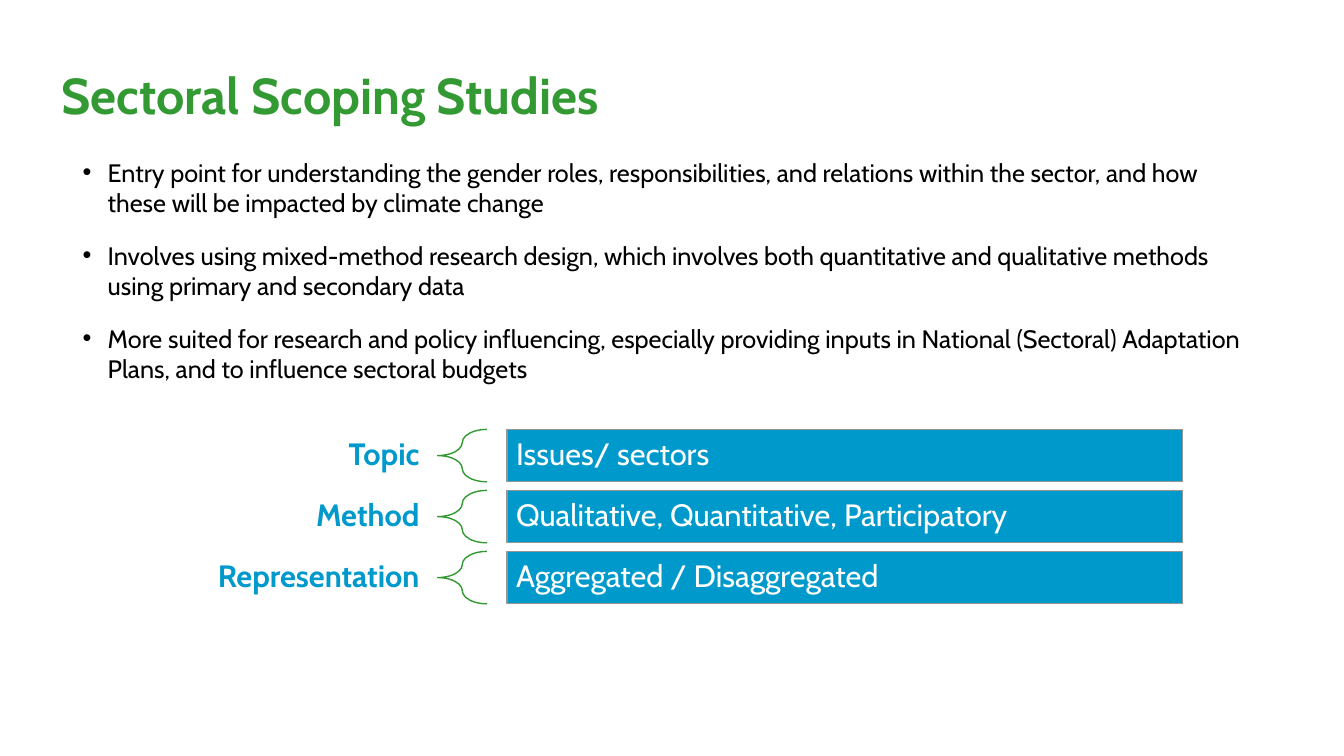
from pptx import Presentation
from pptx.dml.color import RGBColor
from pptx.enum.shapes import MSO_SHAPE
from pptx.enum.text import MSO_ANCHOR, PP_ALIGN
from pptx.oxml.ns import qn
from pptx.util import Inches, Pt
from lxml import etree

FONT = "Cabin"
GREEN, BLUE, GREY, BLACK, WHITE = "339933", "0099CC", "959595", "000000", "FFFFFF"
BULLETS = [
    "Entry point for understanding the gender roles, responsibilities, and relations "
    "within the sector, and how these will be impacted by climate change",
    "Involves using mixed-method research design, which involves both quantitative "
    "and qualitative methods using primary and secondary data",
    "More suited for research and policy influencing, especially providing inputs in "
    "National (Sectoral) Adaptation Plans, and to influence sectoral budgets",
]
ROWS = [
    ("Topic", "Issues/ sectors"),
    ("Method", "Qualitative, Quantitative, Participatory"),
    ("Representation", "Aggregated / Disaggregated"),
]
ROW_TOP, ROW_STEP, ROW_HEIGHT = 4.26, 0.605, 0.52


def rgb(value):
    return RGBColor.from_string(value)


def set_frame(tf, margin_x, margin_y, anchor):
    tf.word_wrap = True
    tf.margin_left = tf.margin_right = Inches(margin_x)
    tf.margin_top = tf.margin_bottom = Inches(margin_y)
    tf.vertical_anchor = anchor


def add_run(p, text, size, color, bold=False):
    r = p.add_run()
    r.text = text
    r.font.name = FONT
    r.font.size = Pt(size)
    r.font.bold = bold
    r.font.color.rgb = rgb(color)


def add_line_of_text(sp, text, size, color, margins, bold=False, align=PP_ALIGN.LEFT):
    """Fill a shape with one vertically centred paragraph."""
    set_frame(sp.text_frame, *margins, MSO_ANCHOR.MIDDLE)
    p = sp.text_frame.paragraphs[0]
    p.alignment = align
    p.line_spacing = 0.9
    add_run(p, text, size, color, bold)


def add_text_box(s, x, y, w, h):
    return s.shapes.add_textbox(Inches(x), Inches(y), Inches(w), Inches(h))


def add_outlined_shape(s, kind, x, y, w, h, line):
    sp = s.shapes.add_shape(kind, Inches(x), Inches(y), Inches(w), Inches(h))
    sp.shadow.inherit = False
    sp.line.color.rgb = rgb(line)
    sp.line.width = Pt(1)
    return sp


def make_bullet(p):
    pPr = p._p.get_or_add_pPr()
    pPr.set("marL", str(Inches(0.25)))
    pPr.set("indent", str(-Inches(0.25)))
    color = etree.SubElement(pPr, qn("a:buClr"))
    etree.SubElement(color, qn("a:srgbClr")).set("val", BLACK)
    etree.SubElement(pPr, qn("a:buFont")).set("typeface", "Arial")
    etree.SubElement(pPr, qn("a:buChar")).set("char", "•")


def add_bullets(s):
    tf = add_text_box(s, 0.72, 1.51, 11.82, 2.5).text_frame
    set_frame(tf, 0.1, 0.05, MSO_ANCHOR.TOP)
    for i, text in enumerate(BULLETS):
        p = tf.add_paragraph() if i else tf.paragraphs[0]
        make_bullet(p)
        if i:
            p.space_before = Pt(16)
        add_run(p, text, 18, BLACK)


def add_row(s, y, label, detail):
    """Draw a label, a brace and a bar side by side."""
    label_box = add_text_box(s, 1.59, y + 0.02, 2.74, 0.48)
    add_line_of_text(label_box, label, 22, BLUE, (0.17, 0.06), True, PP_ALIGN.RIGHT)

    brace = add_outlined_shape(s, MSO_SHAPE.LEFT_BRACE, 4.34, y, 0.49, ROW_HEIGHT, GREEN)
    brace.fill.background()
    brace.adjustments[0] = 0.35

    bar = add_outlined_shape(s, MSO_SHAPE.RECTANGLE, 5.03, y, 6.7, ROW_HEIGHT, GREY)
    bar.fill.solid()
    bar.fill.fore_color.rgb = rgb(BLUE)
    add_line_of_text(bar, detail, 22, WHITE, (0.09, 0.09))


def main():
    prs = Presentation()
    prs.slide_width, prs.slide_height = Inches(13.33), Inches(7.5)
    s = prs.slides.add_slide(prs.slide_layouts[6])

    title = add_text_box(s, 0.51, 0.65, 8.15, 0.65)
    add_line_of_text(title, "Sectoral Scoping Studies", 36, GREEN, (0.1, 0.05), True)
    add_bullets(s)
    for i, (label, detail) in enumerate(ROWS):
        add_row(s, ROW_TOP + i * ROW_STEP, label, detail)

    prs.save("out.pptx")


if __name__ == "__main__":
    main()
